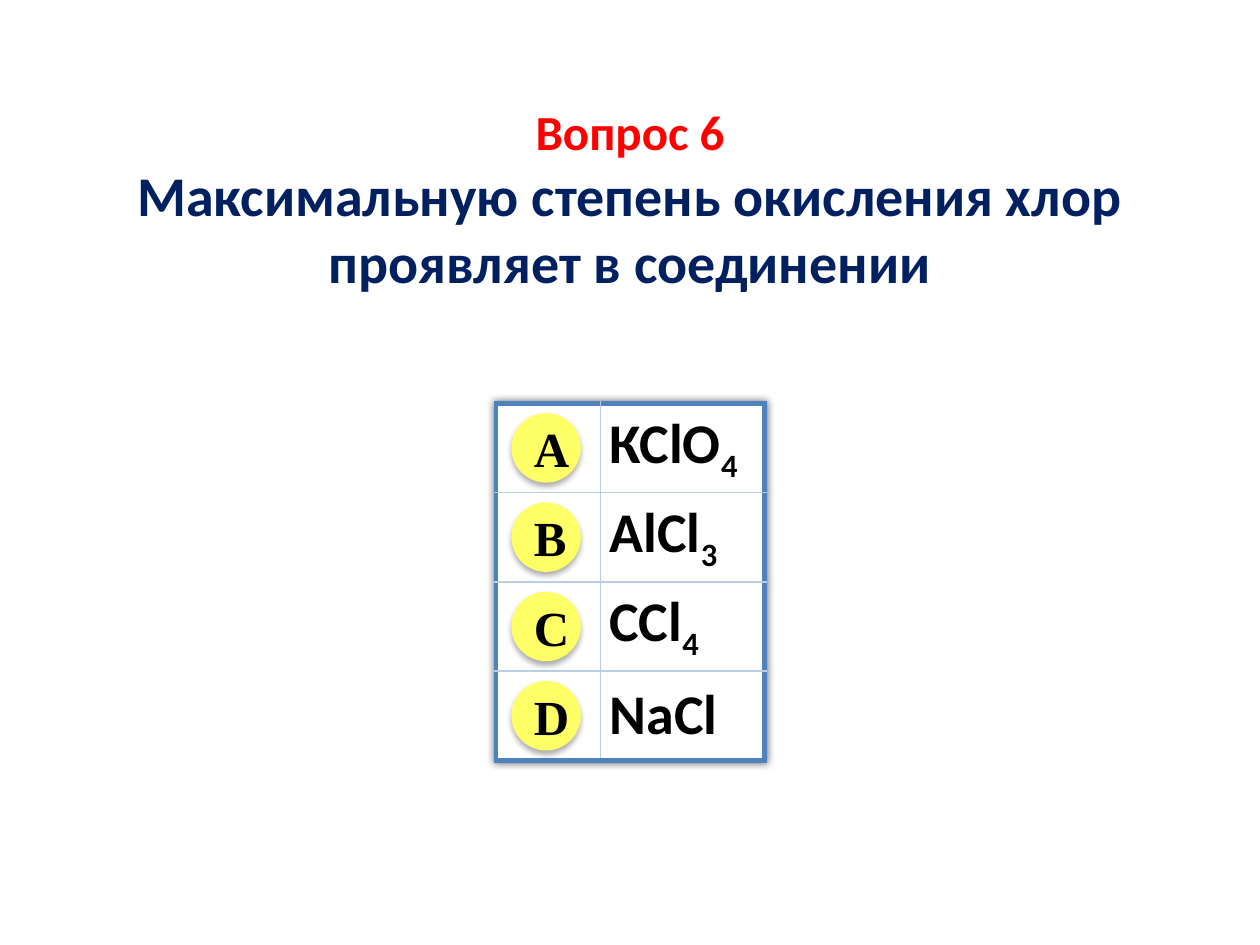
from dataclasses import dataclass

from lxml import etree
from pptx import Presentation
from pptx import util as u
from pptx.dml.color import RGBColor
from pptx.enum import shapes, text
from pptx.oxml.ns import qn

BLUE, PALE = "4F81BD", "B9CDE5"
COLS = (2.11, 3.3)
ROW_H = 1.8
LEFT, TOP = 10.0, 8.13
DISC = 1.4


@dataclass
class Answer:
    letter: str
    formula: str
    index: str = ""


ANSWERS = [
    Answer("A", "КСlО", "4"),
    Answer("B", "AlСl", "3"),
    Answer("C", "ССl", "4"),
    Answer("D", "NaCl"),
]


def color(value: str) -> RGBColor:
    return RGBColor.from_string(value)


def fill(obj, value: str) -> None:
    obj.fill.solid()
    obj.fill.fore_color.rgb = color(value)


def add_text(p, content: str, *, size=32, rgb="000000", font="Calibri", base=0) -> None:
    r = p.add_run()
    r.text = content
    r.font.size = u.Pt(size)
    r.font.name = font
    r.font.bold = True
    r.font.color.rgb = color(rgb)
    if base:
        r.font._element.set("baseline", str(base * 1000))


def add_shadow(parent, blur: float, dist: float, alpha: int, index: int) -> None:
    effects = etree.Element(qn("a:effectLst"))
    shadow = etree.SubElement(
        effects, qn("a:outerShdw"), blurRad=str(u.Pt(blur)), dist=str(u.Pt(dist)),
        dir="5400000", algn="ctr", rotWithShape="0")
    rgb = etree.SubElement(shadow, qn("a:srgbClr"), val="000000")
    etree.SubElement(rgb, qn("a:alpha"), val=str(alpha * 1000))
    parent.insert(index, effects)


def set_borders(cell, outer: dict[str, bool]) -> None:
    tcPr = cell._tc.get_or_add_tcPr()
    for i, (side, is_outer) in enumerate(outer.items()):
        ln = etree.Element(qn(f"a:ln{side}"), w=str(u.Pt(3 if is_outer else 1)))
        solid = etree.SubElement(ln, qn("a:solidFill"))
        etree.SubElement(solid, qn("a:srgbClr"), val=BLUE if is_outer else PALE)
        tcPr.insert(i, ln)


def add_answers(s, answers: list[Answer]) -> None:
    last = len(answers) - 1
    table = s.shapes.add_table(
        len(answers), len(COLS), u.Cm(LEFT), u.Cm(TOP),
        u.Cm(sum(COLS)), u.Cm(ROW_H * len(answers))).table
    table.first_row = table.horz_banding = False
    add_shadow(table._tbl.tblPr, 5, 0, 60, 0)
    for col, width in zip(table.columns, COLS):
        col.width = u.Cm(width)
    for i, answer in enumerate(answers):
        table.rows[i].height = u.Cm(ROW_H)
        for j in range(len(COLS)):
            cell = table.cell(i, j)
            fill(cell, "FFFFFF")
            set_borders(cell, {"L": j == 0, "R": j == 1, "T": i == 0, "B": i == last})
            cell.vertical_anchor = text.MSO_ANCHOR.MIDDLE
            cell.margin_left = cell.margin_right = u.Cm(0.18)
            cell.margin_top = cell.margin_bottom = 0
        p = table.cell(i, 1).text_frame.paragraphs[0]
        add_text(p, answer.formula)
        if answer.index:
            add_text(p, answer.index, base=-25)


def add_disc(s, letter: str, top: float) -> None:
    sp = s.shapes.add_shape(
        shapes.MSO_SHAPE.OVAL, u.Cm(10.31), u.Cm(top), u.Cm(DISC), u.Cm(DISC))
    fill(sp, "FFFF66")
    sp.line.fill.background()
    spPr = sp._element.spPr
    add_shadow(spPr, 3.5, 2.2, 32, len(spPr))
    tf = sp.text_frame
    tf.word_wrap = True
    tf.vertical_anchor = text.MSO_ANCHOR.MIDDLE
    p = tf.paragraphs[0]
    p.alignment = text.PP_ALIGN.CENTER
    add_text(p, letter, size=28, font="Times New Roman")


def add_question(s) -> None:
    sp = s.shapes.add_textbox(u.Cm(0.6), u.Cm(1.93), u.Cm(24.2), u.Cm(4.2))
    fill(sp, "FFFFFF")
    tf = sp.text_frame
    tf.word_wrap = True
    tf.auto_size = text.MSO_AUTO_SIZE.SHAPE_TO_FIT_TEXT
    add_text(tf.paragraphs[0], "Вопрос 6", size=28, rgb="FF0000")
    add_text(tf.add_paragraph(),
             "Максимальную степень окисления хлор проявляет в соединении", rgb="002060")
    for p in tf.paragraphs:
        p.alignment = text.PP_ALIGN.CENTER


def main() -> None:
    prs = Presentation()
    prs.slide_width, prs.slide_height = u.Cm(25.4), u.Cm(19.05)
    s = prs.slides.add_slide(prs.slide_layouts[6])
    add_answers(s, ANSWERS)
    for i, answer in enumerate(ANSWERS):
        add_disc(s, answer.letter, TOP + (ROW_H - DISC) / 2 + i * ROW_H)
    add_question(s)
    prs.save("out.pptx")


if __name__ == "__main__":
    main()
